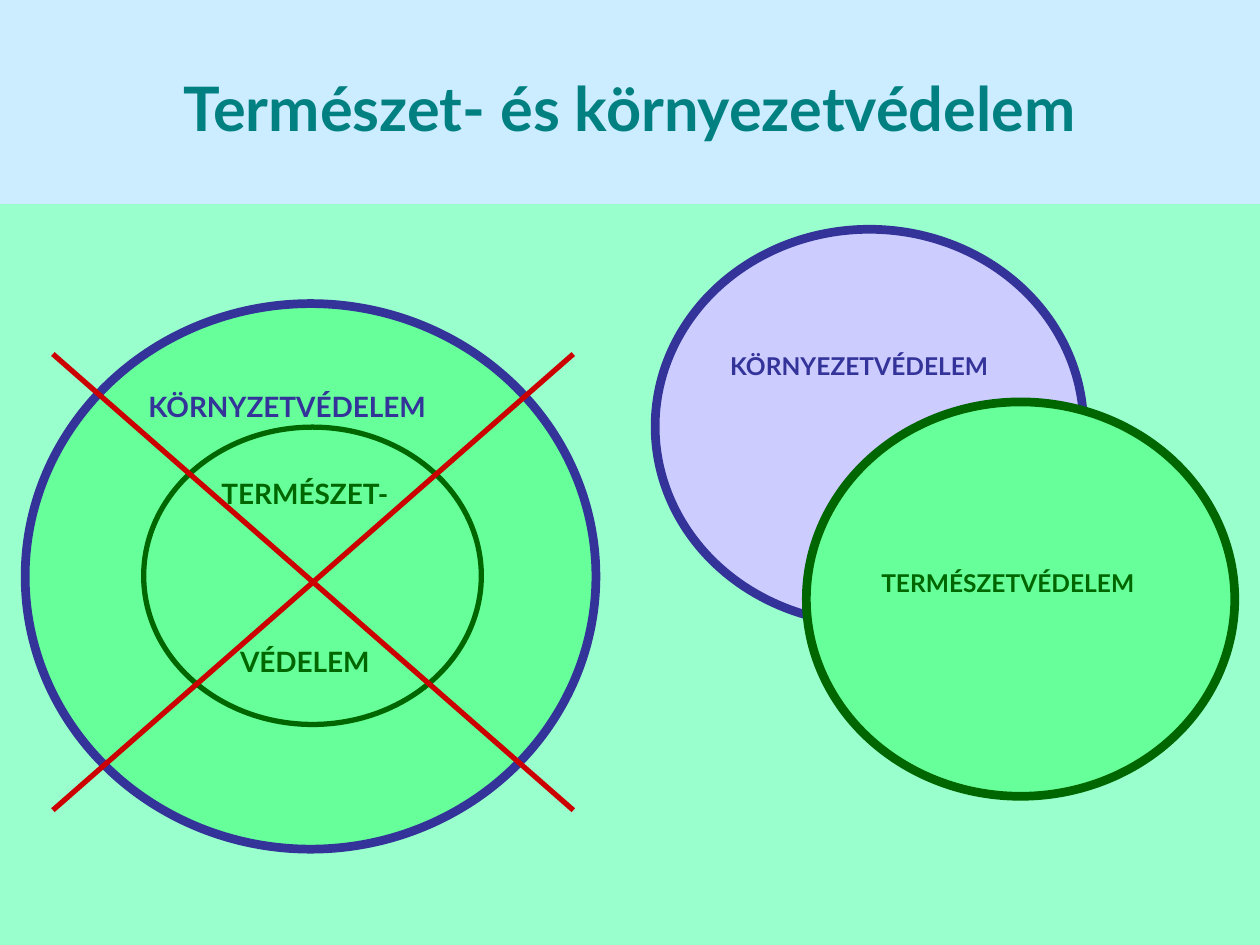
from dataclasses import dataclass

from lxml import etree
from pptx import Presentation
from pptx import util as u
from pptx.dml.color import RGBColor
from pptx.enum import shapes, text
from pptx.oxml.ns import qn

FONT = "Lato"
SKY = RGBColor(0xCC, 0xEC, 0xFF)
MINT = RGBColor(0x99, 0xFF, 0xCC)
LIME = RGBColor(0x66, 0xFF, 0x99)
LILAC = RGBColor(0xCC, 0xCC, 0xFF)
TEAL = RGBColor(0x00, 0x80, 0x80)
BLUE = RGBColor(0x33, 0x33, 0x99)
GREEN = RGBColor(0x00, 0x66, 0x00)
RED = RGBColor(0xCC, 0x00, 0x00)


@dataclass
class Circle:
    left: float
    top: float
    width: float
    height: float
    fill: RGBColor
    ink: RGBColor
    line: float
    size: float
    words: tuple[str, ...]
    drop: float  # inset above the text
    shift: float  # inset right of the text
    gap: float = 0  # points between paragraphs


CIRCLES = (
    Circle(5.2, 1.82, 3.4, 3.13, LILAC, BLUE, 5, 14,
           ("KÖRNYEZETVÉDELEM",), 0.51, 0.16),
    Circle(6.4, 3.19, 3.4, 3.13, LIME, GREEN, 5, 14,
           ("TERMÉSZETVÉDELEM",), 0.86, 0.2),
    Circle(0.2, 2.41, 4.53, 4.33, LIME, BLUE, 5, 16,
           ("KÖRNYZETVÉDELEM",), 0.05, 0.37),
    Circle(1.14, 3.39, 2.68, 2.36, LIME, GREEN, 3, 16,
           ("TERMÉSZET-", "VÉDELEM"), 0.05, 0.12, 76.5),
)
CROSS_LEFT, CROSS_RIGHT = 0.42, 4.55
CROSS_TOP, CROSS_BASE = 2.81, 6.43


def add_run(para, words: str, size: float, ink: RGBColor) -> None:
    para.alignment = text.PP_ALIGN.CENTER
    run = para.add_run()
    run.text = words
    run.font.name = FONT
    run.font.size = u.Pt(size)
    run.font.bold = True
    run.font.color.rgb = ink


def paint(shape, fill: RGBColor) -> None:
    shape.fill.solid()
    shape.fill.fore_color.rgb = fill


def draw_title(slide) -> None:
    title = slide.shapes.title
    title.left, title.top = u.Inches(0), u.Inches(0)
    title.width, title.height = u.Inches(10), u.Inches(1.7)
    paint(title, SKY)
    title.text_frame.vertical_anchor = text.MSO_ANCHOR.MIDDLE
    add_run(title.text_frame.paragraphs[0],
            "Természet- és környezetvédelem", 35, TEAL)


def draw_field(group) -> None:
    field = group.shapes.add_shape(
        shapes.MSO_SHAPE.RECTANGLE,
        u.Inches(0), u.Inches(1.62), u.Inches(10), u.Inches(5.88))
    field.shadow.inherit = False
    paint(field, MINT)
    field.line.fill.background()


def draw_circle(group, item: Circle) -> None:
    shape = group.shapes.add_shape(
        shapes.MSO_SHAPE.OVAL, u.Inches(item.left), u.Inches(item.top),
        u.Inches(item.width), u.Inches(item.height))
    shape.shadow.inherit = False
    paint(shape, item.fill)
    shape.line.color.rgb = item.ink
    shape.line.width = u.Pt(item.line)
    frame = shape.text_frame
    frame.word_wrap = True
    frame.vertical_anchor = text.MSO_ANCHOR.TOP
    frame.margin_left = frame.margin_bottom = 0
    frame.margin_top = u.Inches(item.drop)
    frame.margin_right = u.Inches(item.shift)
    for i, words in enumerate(item.words):
        para = frame.add_paragraph() if i else frame.paragraphs[0]
        if i:
            para.space_before = u.Pt(item.gap)
        add_run(para, words, item.size, item.ink)


def draw_stroke(group, start: float, end: float) -> None:
    """Draw one arm of the cross, from height start to height end."""
    stroke = group.shapes.add_connector(
        shapes.MSO_CONNECTOR.STRAIGHT, u.Inches(CROSS_LEFT), u.Inches(start),
        u.Inches(CROSS_RIGHT), u.Inches(end))
    stroke.line.color.rgb = RED
    stroke.line.width = u.Pt(3)
    etree.SubElement(stroke._element.spPr, qn("a:effectLst"))


def main() -> None:
    deck = Presentation()
    deck.slide_width, deck.slide_height = u.Inches(10), u.Inches(7.5)
    slide = deck.slides.add_slide(deck.slide_layouts[5])
    draw_title(slide)
    group = slide.shapes.add_group_shape()
    draw_field(group)
    for item in CIRCLES:
        draw_circle(group, item)
    draw_stroke(group, CROSS_BASE, CROSS_TOP)
    draw_stroke(group, CROSS_TOP, CROSS_BASE)
    deck.save("out.pptx")


if __name__ == "__main__":
    main()
